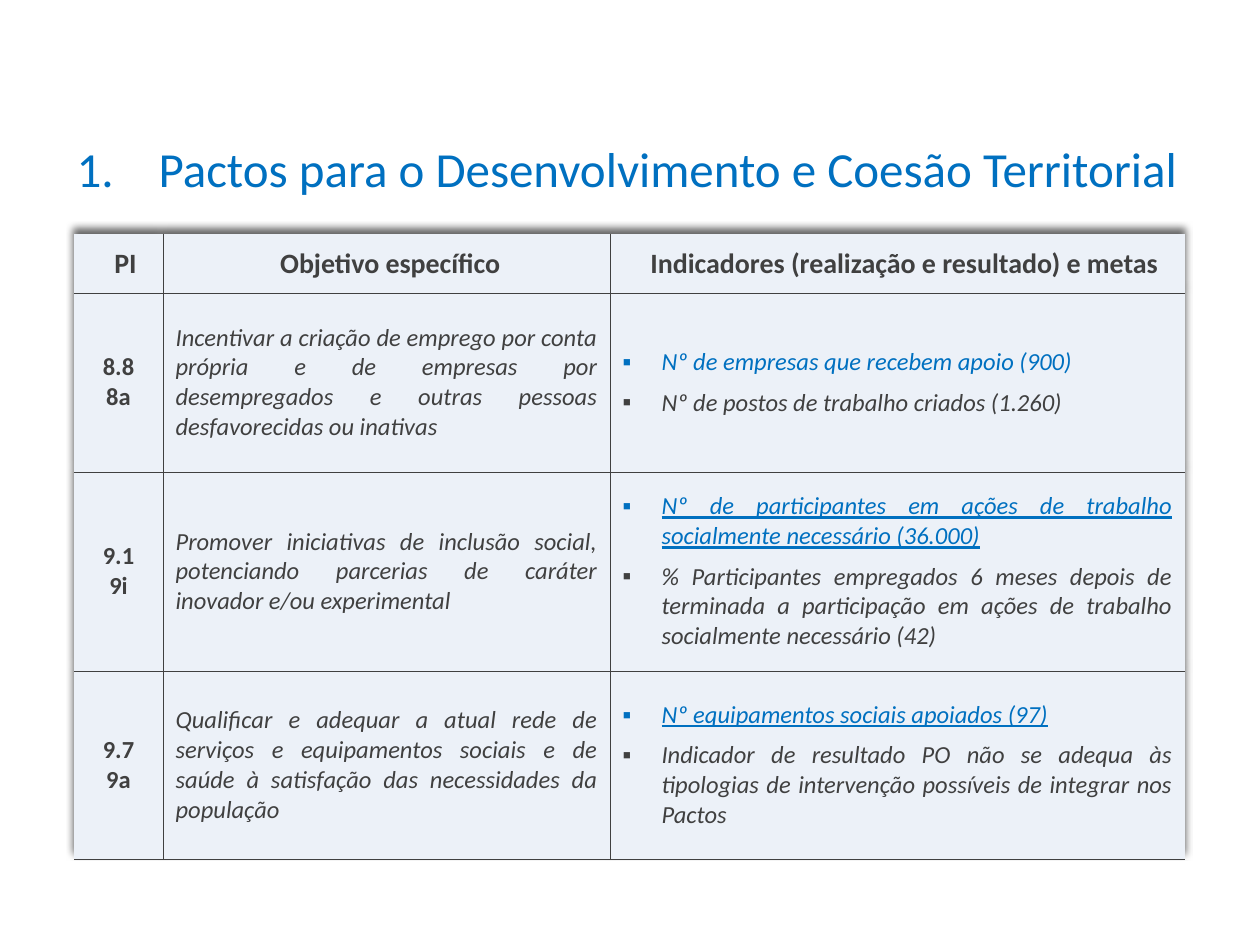
from dataclasses import dataclass
from typing import Optional

from lxml.etree import SubElement
from pptx import Presentation
from pptx.dml.color import RGBColor
from pptx.enum.text import MSO_ANCHOR as Anchor, MSO_AUTO_SIZE as AutoSize, PP_ALIGN as Align
from pptx.oxml.ns import qn
from pptx.util import Emu, Pt

BLUE = RGBColor(0x00, 0x70, 0xC0)
GREY = RGBColor(0x40, 0x40, 0x40)
PALE = RGBColor(0xEC, 0xF1, 0xF8)
BLACK = RGBColor(0x00, 0x00, 0x00)
FONT = "Calibri"
PX_PER_INCH = 126
PLAIN_TABLE = "{2D5ABB26-0587-4C30-8999-92F81FD0307C}"
COLUMN_WIDTHS = (89, 447, 575)
ROW_HEIGHTS = (59, 179, 199, 188)
HEADERS = ("PI", "Objetivo específico ", "Indicadores (realização e resultado) e metas")


@dataclass
class Priority:
    codes: tuple[str, str]
    objective: str
    output: str
    result: str
    underline: bool = True


PRIORITIES = [
    Priority(
        ("8.8", "8a"),
        "Incentivar a criação de emprego por conta própria e de empresas por "
        "desempregados e outras pessoas desfavorecidas ou inativas",
        "Nº de empresas que recebem apoio (900)",
        "Nº de postos de trabalho criados (1.260)",
        underline=False,
    ),
    Priority(
        ("9.1", "9i"),
        "Promover iniciativas de inclusão social, potenciando parcerias de caráter "
        "inovador e/ou experimental",
        "Nº de participantes em ações de trabalho socialmente necessário (36.000)",
        "% Participantes empregados 6 meses depois de terminada a participação em "
        "ações de trabalho socialmente necessário (42)",
    ),
    Priority(
        ("9.7", "9a"),
        "Qualificar e adequar a atual rede de serviços e equipamentos sociais e de "
        "saúde à satisfação das necessidades da população",
        "Nº equipamentos sociais apoiados (97)",
        "Indicador de resultado PO não se adequa às tipologias de intervenção "
        "possíveis de integrar nos Pactos",
    ),
]


def px(length: int) -> Emu:
    return Emu(round(length * 914400 / PX_PER_INCH))


def write(frame, text: str, *, first: bool = True, size: int = 14,
          color: RGBColor = GREY, bold: bool = False, italic: bool = False,
          underline: bool = False, align: Align = Align.LEFT, before: int = 0,
          after: int = 0, indent: int = 0, bullet: Optional[str] = None,
          numbering: Optional[str] = None) -> None:
    para = frame.paragraphs[0] if first else frame.add_paragraph()
    para.alignment = align
    para.space_before, para.space_after = Pt(before), Pt(after)
    properties = para._p.get_or_add_pPr()
    if indent:
        properties.set("marL", str(px(indent)))
        properties.set("indent", str(-px(indent)))
    if bullet:
        SubElement(properties, qn("a:buFont"), typeface=FONT)
        SubElement(properties, qn("a:buChar"), char=bullet)
    if numbering:
        SubElement(properties, qn("a:buFont"), typeface=FONT)
        SubElement(properties, qn("a:buAutoNum"), type=numbering)
    span = para.add_run()
    span.text = text
    font = span.font
    font.name, font.size, font.color.rgb = FONT, Pt(size), color
    font.bold, font.italic, font.underline = bold, italic, underline


def add_color(parent, color: RGBColor):
    return SubElement(parent, qn("a:srgbClr"), val=str(color))


def style_cell(cell, row: int, column: int) -> None:
    properties = cell._tc.get_or_add_tcPr()
    edges = {
        "a:lnL": column > 0,
        "a:lnR": column < len(COLUMN_WIDTHS) - 1,
        "a:lnT": row > 0,
        "a:lnB": True,
    }
    for tag, shown in edges.items():
        if shown:
            line = SubElement(properties, qn(tag), w=str(Pt(0.25)))
            add_color(SubElement(line, qn("a:solidFill")), GREY)
    cell.fill.solid()
    cell.fill.fore_color.rgb = PALE
    cell.vertical_anchor = Anchor.MIDDLE


def add_table_shadow(table) -> None:
    properties = table._tbl.tblPr
    properties.find(qn("a:tableStyleId")).text = PLAIN_TABLE
    effects = SubElement(properties, qn("a:effectLst"))
    properties.insert(0, effects)
    shadow = SubElement(effects, qn("a:outerShdw"), blurRad=str(Pt(4)), dist=str(Pt(3)),
                        dir="16200000", algn="b", rotWithShape="0")
    SubElement(add_color(shadow, BLACK), qn("a:alpha"), val="60000")


def add_title(page) -> None:
    title = page.shapes.title
    title.left, title.top, title.width, title.height = map(px, (64, 132, 1142, 72))
    frame = title.text_frame
    frame.word_wrap = True
    frame.auto_size = AutoSize.NONE
    frame.vertical_anchor = Anchor.TOP
    write(frame, " Pactos para o Desenvolvimento e Coesão Territorial", size=28,
          color=BLUE, indent=71, numbering="arabicPeriod")


def add_priority_table(page) -> None:
    table = page.shapes.add_table(
        len(ROW_HEIGHTS), len(COLUMN_WIDTHS), px(74), px(234),
        px(sum(COLUMN_WIDTHS)), px(sum(ROW_HEIGHTS))).table
    table.first_row = table.horz_banding = False
    add_table_shadow(table)
    for column, width in zip(table.columns, COLUMN_WIDTHS):
        column.width = px(width)
    for row, height in zip(table.rows, ROW_HEIGHTS):
        row.height = px(height)
    for row in range(len(ROW_HEIGHTS)):
        for column in range(len(COLUMN_WIDTHS)):
            style_cell(table.cell(row, column), row, column)

    for column, header in enumerate(HEADERS):
        cell = table.cell(0, column)
        cell.margin_left, cell.margin_top = px(15), px(1)
        cell.margin_right, cell.margin_bottom = px(1), px(0)
        write(cell.text_frame, header, size=16, bold=True, align=Align.CENTER)

    for row, priority in enumerate(PRIORITIES, start=1):
        codes, objective, indicators = (
            table.cell(row, column).text_frame for column in range(len(COLUMN_WIDTHS)))
        for position, code in enumerate(priority.codes):
            write(codes, code, first=position == 0, bold=True, align=Align.CENTER)
        write(objective, priority.objective, italic=True, align=Align.JUSTIFY)
        write(indicators, priority.output, color=BLUE, italic=True,
              underline=priority.underline, align=Align.JUSTIFY, indent=39, bullet="▪")
        write(indicators, priority.result, first=False, italic=True,
              align=Align.JUSTIFY, before=6, indent=39, bullet="▪")


def main() -> None:
    deck = Presentation()
    deck.slide_width, deck.slide_height = px(1260), px(945)
    page = deck.slides.add_slide(deck.slide_layouts[5])
    add_title(page)
    add_priority_table(page)
    deck.save("out.pptx")


if __name__ == "__main__":
    main()
